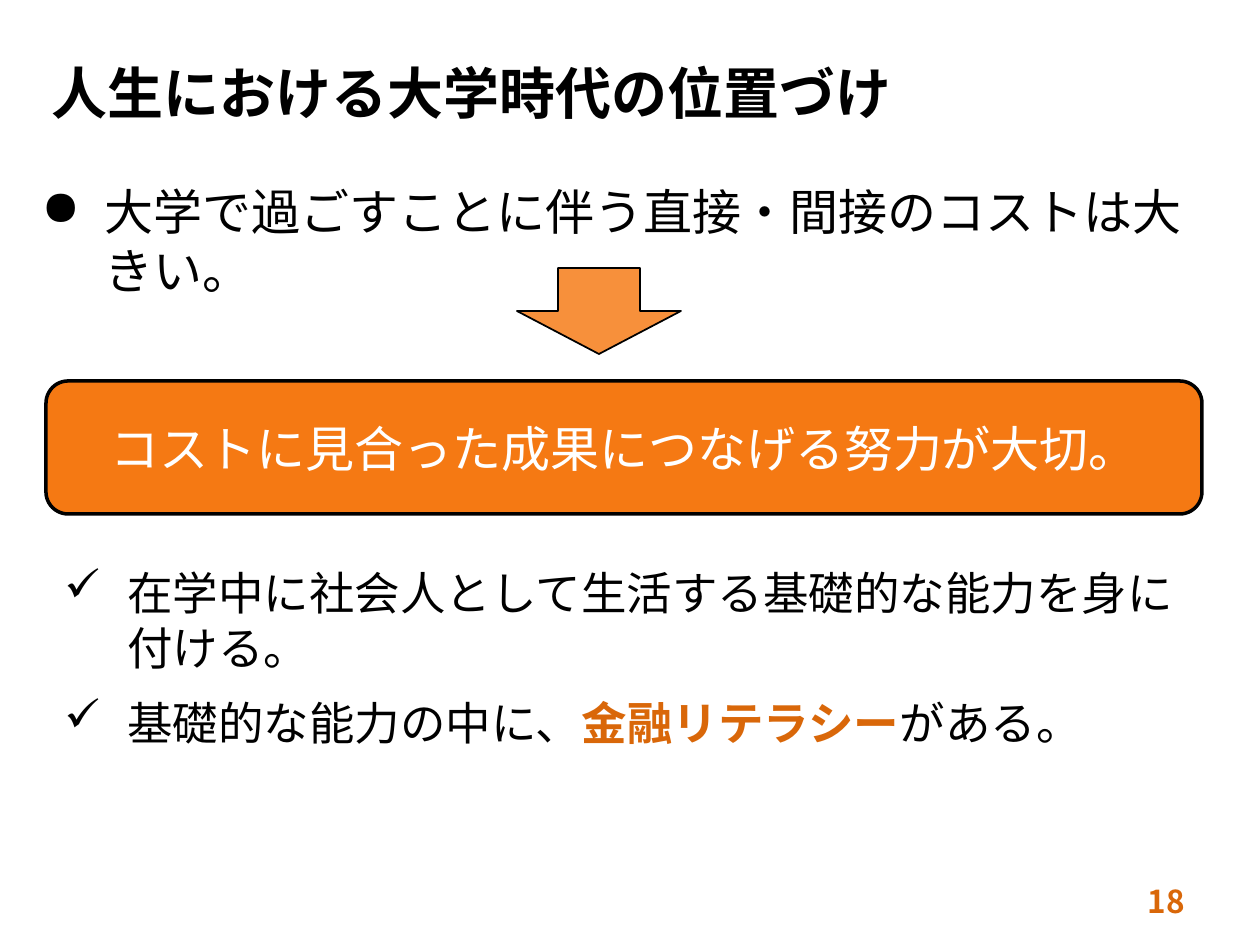
from dataclasses import dataclass

from lxml import etree
from pptx import Presentation
from pptx.dml.color import RGBColor
from pptx.enum import shapes, text
from pptx.oxml import ns
from pptx.util import Pt

PX = 914400 / 126
FACE = "Noto Sans CJK JP"
BLACK = RGBColor(0x00, 0x00, 0x00)
WHITE = RGBColor(0xFF, 0xFF, 0xFF)
ORANGE = RGBColor(0xF5, 0x79, 0x13)
LIGHT = RGBColor(0xF7, 0x90, 0x3B)
DARK = RGBColor(0xD9, 0x67, 0x09)
KINDS = shapes.MSO_SHAPE
ALIGN = text.PP_ALIGN
ANCHOR = text.MSO_ANCHOR


@dataclass
class Box:
    left: int
    top: int
    width: int
    height: int

    def emu(self) -> list[int]:
        return [round(n * PX) for n in (self.left, self.top, self.width, self.height)]


@dataclass
class Style:
    size: int
    color: RGBColor = BLACK
    bold: bool = False
    align: ALIGN = ALIGN.LEFT
    anchor: ANCHOR = ANCHOR.TOP
    bullet: str = ""
    indent: int = 0  # px, left edge of the text
    gap: int = 0  # points before and after


def add_bullet(para, style: Style) -> None:
    props = para._p.get_or_add_pPr()
    props.set("marL", str(round(style.indent * PX)))
    props.set("indent", str(round(-63 * PX)))
    mark = etree.Element(ns.qn("a:buChar"), char=style.bullet)
    props.find(ns.qn("a:defRPr")).addprevious(mark)


def write(shape, paras: list[list[str]], style: Style) -> None:
    """Fill a shape with paragraphs; odd runs are emphasised."""
    frame = shape.text_frame
    frame.word_wrap = True
    frame.vertical_anchor = style.anchor
    for i, parts in enumerate(paras):
        para = frame.add_paragraph() if i else frame.paragraphs[0]
        para.alignment = style.align
        if style.gap:
            para.space_before = para.space_after = Pt(style.gap)
        font = para.font
        font.size, font.bold, font.name = Pt(style.size), style.bold, FACE
        font.color.rgb = style.color
        etree.SubElement(font._element, ns.qn("a:ea"), typeface=FACE)
        if style.bullet:
            add_bullet(para, style)
        for j, part in enumerate(parts):
            run = para.add_run()
            run.text = part
            if j % 2:
                run.font.bold = True
                run.font.color.rgb = DARK


def add_text(slide, box: Box, paras: list[list[str]], style: Style) -> None:
    write(slide.shapes.add_textbox(*box.emu()), paras, style)


def add_form(slide, kind: KINDS, box: Box, fill: RGBColor, line: int):
    form = slide.shapes.add_shape(kind, *box.emu())
    form.shadow.inherit = False
    form.fill.solid()
    form.fill.fore_color.rgb = fill
    form.line.color.rgb = BLACK
    form.line.width = Pt(line)
    return form


def main() -> None:
    deck = Presentation()
    deck.slide_width, deck.slide_height = round(1260 * PX), round(945 * PX)
    slide = deck.slides.add_slide(deck.slide_layouts[6])

    # Title and opening point
    add_text(slide, Box(39, 52, 1171, 116), [["人生における大学時代の位置づけ"]],
             Style(32, bold=True))
    add_text(slide, Box(29, 175, 1191, 86),
             [["大学で過ごすことに伴う直接・間接のコストは大きい。"]],
             Style(28, bullet="●", indent=63))

    # Arrow leading to the message
    add_form(slide, KINDS.DOWN_ARROW, Box(517, 268, 164, 86), LIGHT, 1)
    banner = add_form(slide, KINDS.ROUNDED_RECTANGLE, Box(46, 381, 1156, 133), ORANGE, 2)
    write(banner, [["コストに見合った成果につなげる努力が大切。"]],
          Style(28, WHITE, align=ALIGN.CENTER, anchor=ANCHOR.MIDDLE))

    # Check list
    add_text(slide, Box(39, 559, 1188, 271),
             [["在学中に社会人として生活する基礎的な能力を身に付ける。"],
              ["基礎的な能力の中に、", "金融リテラシー", "がある。"]],
             Style(26, bullet="✓", indent=76, gap=6))

    # Page number
    add_text(slide, Box(903, 876, 294, 50), [["18"]],
             Style(18, DARK, True, ALIGN.RIGHT, ANCHOR.MIDDLE))

    deck.save("out.pptx")


if __name__ == "__main__":
    main()
